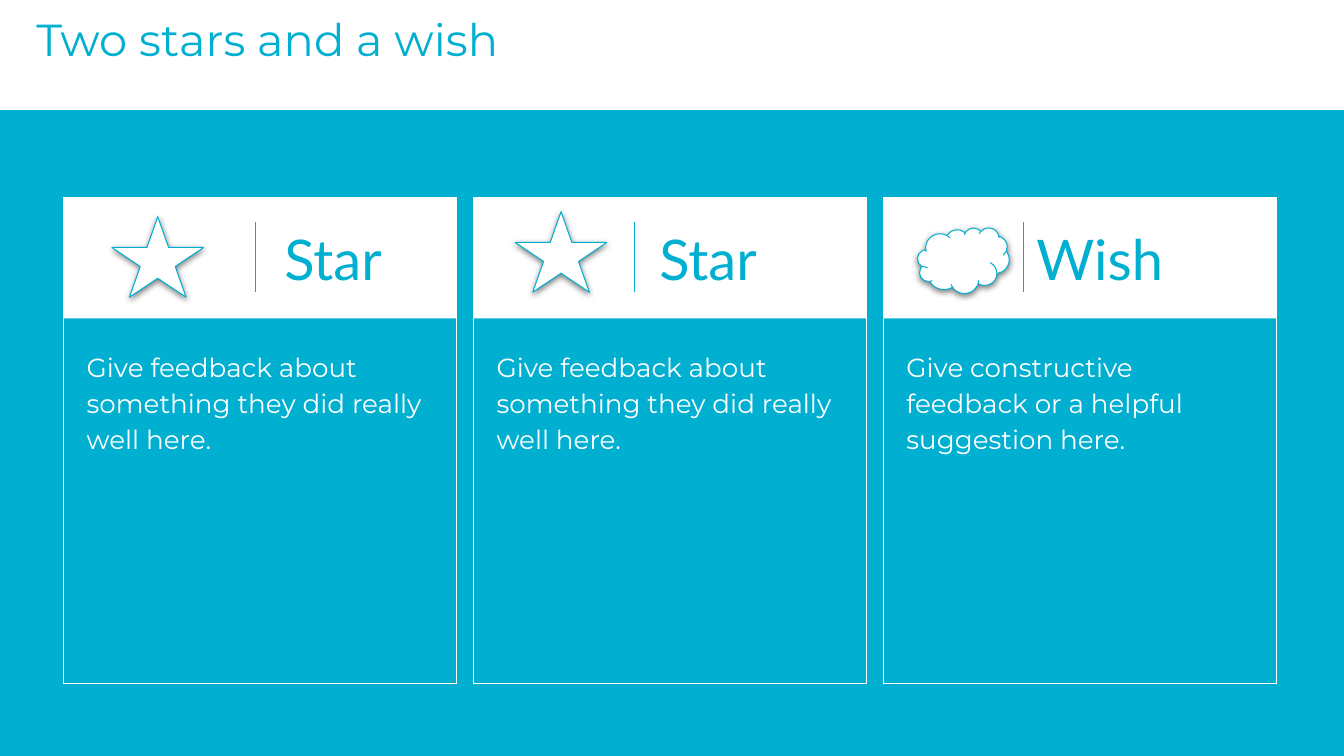
"""Build the "Two stars and a wish" peer feedback slide."""
import pptx
import pptx.util
import pptx.dml.color
import pptx.enum.shapes
import pptx.enum.text
import pptx.oxml
import pptx.oxml.ns

Inches, Pt = pptx.util.Inches, pptx.util.Pt
SHAPE = pptx.enum.shapes.MSO_SHAPE
ANCHOR = pptx.enum.text.MSO_ANCHOR

TITLE = "Two stars and a wish"
PRAISE = "Give feedback about something they did really well here."
ADVICE = "Give constructive feedback or a helpful suggestion here."
CARDS = [
    {"heading": "Star", "heading_box": (2.69, 1.73), "body": PRAISE,
     "icon": SHAPE.STAR_5_POINT, "icon_box": (1.11, 2.15, 0.91, 0.8), "divider": 2.53},
    {"heading": "Star", "heading_box": (6.41, 1.73), "body": PRAISE,
     "icon": SHAPE.STAR_5_POINT, "icon_box": (5.11, 2.1, 0.91, 0.8), "divider": 6.29},
    {"heading": "Wish", "heading_box": (10.15, 2.16), "body": ADVICE,
     "icon": SHAPE.CLOUD, "icon_box": (9.1, 2.26, 0.91, 0.65), "divider": 10.15},
]
THEME = {
    "blue": pptx.dml.color.RGBColor.from_string("01AFD1"),
    "white": pptx.dml.color.RGBColor.from_string("FFFFFF"),
    "text_font": "Montserrat",
    "heading_font": "Lato",
    "title_size": Pt(32),
    "heading_size": Pt(40),
    "body_size": Pt(18.7),
    "line_width": Pt(0.75),
}
CARD_LEFT, CARD_TOP, CARD_STEP = 0.63, 1.96, 4.065
CARD_WIDTH, CARD_HEIGHT, HEADER_HEIGHT = 3.9, 4.82, 1.2
DIVIDER_TOP, DIVIDER_BOTTOM = 2.2, 2.9
BODY_INSET, BODY_TOP, BODY_WIDTH, BODY_HEIGHT = 0.1, 3.31, 3.69, 3.47
TEXT_INSET = Inches(0.13)
SHADOW = (
    f'<a:effectLst {pptx.oxml.ns.nsdecls("a")}>'
    '<a:outerShdw blurRad="57150" dist="19050" dir="5400000" algn="bl" rotWithShape="0">'
    '<a:srgbClr val="000000"><a:alpha val="50000"/></a:srgbClr>'
    '</a:outerShdw></a:effectLst>'
)


def apply(target, values):
    for name, value in values.items():
        setattr(target, name, value)


def add_panel(page, kind, area, fill=None, line=None):
    panel = page.shapes.add_shape(kind, *map(Inches, area))
    panel.shadow.inherit = False
    if fill is None:
        panel.fill.background()
    else:
        panel.fill.solid()
        panel.fill.fore_color.rgb = fill
    if line is None:
        panel.line.fill.background()
    else:
        panel.line.color.rgb = line
        panel.line.width = THEME["line_width"]
    return panel


def write(box, text, font, size, color, anchor=ANCHOR.TOP, **spacing):
    frame = box.text_frame
    insets = {f"margin_{side}": TEXT_INSET for side in ("left", "top", "right", "bottom")}
    apply(frame, {"word_wrap": True, "vertical_anchor": anchor,
                  "auto_size": pptx.enum.text.MSO_AUTO_SIZE.NONE, **insets})
    para = frame.paragraphs[0]
    apply(para, {"alignment": pptx.enum.text.PP_ALIGN.LEFT, **spacing})
    span = para.add_run()
    span.text = text
    apply(span.font, {"name": THEME[font], "size": THEME[size]})
    span.font.color.rgb = THEME[color]


def add_text(page, area, *content, **options):
    write(page.shapes.add_textbox(*map(Inches, area)), *content, **options)


def add_divider(page, x):
    divider = page.shapes.add_connector(
        pptx.enum.shapes.MSO_CONNECTOR.STRAIGHT,
        *map(Inches, (x, DIVIDER_TOP, x, DIVIDER_BOTTOM)))
    divider.line.color.rgb = THEME["blue"]
    divider.line.width = THEME["line_width"]
    empty = f'<a:effectLst {pptx.oxml.ns.nsdecls("a")}/>'
    divider._element.spPr.append(pptx.oxml.parse_xml(empty))


def add_icon(page, kind, area):
    icon = add_panel(page, kind, area, THEME["white"], THEME["blue"])
    properties = icon._element.spPr
    properties.replace(properties.find(pptx.oxml.ns.qn("a:effectLst")),
                       pptx.oxml.parse_xml(SHADOW))


def add_card(page, index, card):
    left = CARD_LEFT + index * CARD_STEP
    add_panel(page, SHAPE.RECTANGLE, (left, CARD_TOP, CARD_WIDTH, CARD_HEIGHT),
              line=THEME["white"])
    add_panel(page, SHAPE.RECTANGLE, (left, CARD_TOP, CARD_WIDTH, HEADER_HEIGHT),
              fill=THEME["white"])
    add_divider(page, card["divider"])
    heading_left, heading_width = card["heading_box"]
    add_text(page, (heading_left, CARD_TOP, heading_width, HEADER_HEIGHT),
             card["heading"], "heading_font", "heading_size", "blue", anchor=ANCHOR.MIDDLE)
    add_text(page, (left + BODY_INSET, BODY_TOP, BODY_WIDTH, BODY_HEIGHT),
             card["body"], "text_font", "body_size", "white",
             line_spacing=1.15, space_after=Pt(21.3))
    add_icon(page, card["icon"], card["icon_box"])


def main():
    deck = pptx.Presentation()
    apply(deck, {"slide_width": Inches(13.33), "slide_height": Inches(7.5)})
    page = deck.slides.add_slide(deck.slide_layouts[5])
    page.background.fill.solid()
    page.background.fill.fore_color.rgb = THEME["blue"]

    title = page.shapes.title
    apply(title, {"left": Inches(0.23), "top": Inches(-0.01),
                  "width": Inches(12.2), "height": Inches(1)})
    write(title, TITLE, "text_font", "title_size", "blue")
    band = add_panel(page, SHAPE.RECTANGLE, (0, -0.11, 13.33, 1.2),
                     THEME["white"], THEME["white"])
    title._element.addprevious(band._element)

    for index, card in enumerate(CARDS):
        add_card(page, index, card)
    deck.save("out.pptx")


if __name__ == "__main__":
    main()
